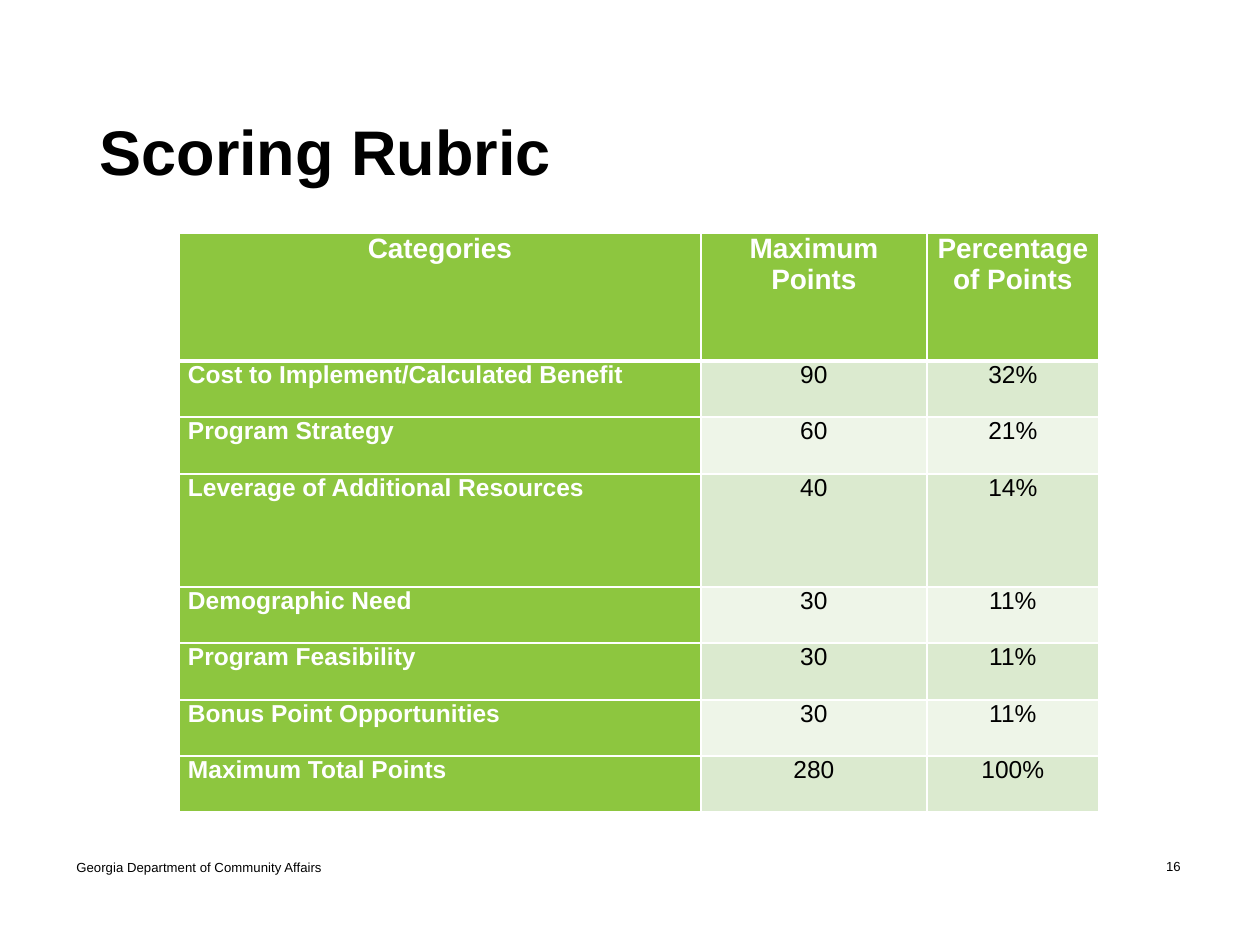
from dataclasses import dataclass

from lxml import etree
from pptx import Presentation
from pptx.dml.color import RGBColor
from pptx.enum import text
from pptx.oxml import ns
from pptx.slide import Slide
from pptx.table import _Cell
from pptx.text.text import TextFrame
from pptx.util import Emu, Pt

PX_PER_INCH = 126
BLACK = RGBColor(0x00, 0x00, 0x00)
WHITE = RGBColor(0xFF, 0xFF, 0xFF)
GREEN = RGBColor(0x8D, 0xC6, 0x3F)
BAND_DARK = RGBColor(0xDB, 0xEA, 0xCF)
BAND_LIGHT = RGBColor(0xEE, 0xF5, 0xE8)
FONT = "Arial"
LEFT, CENTER = text.PP_ALIGN.LEFT, text.PP_ALIGN.CENTER


@dataclass(frozen=True)
class Row:
    height: int
    category: str
    points: str
    share: str


@dataclass(frozen=True)
class Label:
    left: int
    top: int
    width: int
    height: int
    content: str
    align: text.PP_ALIGN


COLUMN_WIDTHS = (522, 226, 172)
ROWS = (
    Row(128, "Categories", "Maximum Points", "Percentage of Points"),
    Row(56, "Cost to Implement/Calculated Benefit", "90", "32%"),
    Row(57, "Program Strategy", "60", "21%"),
    Row(113, "Leverage of Additional Resources", "40", "14%"),
    Row(56, "Demographic Need", "30", "11%"),
    Row(57, "Program Feasibility", "30", "11%"),
    Row(56, "Bonus Point Opportunities", "30", "11%"),
    Row(56, "Maximum Total Points", "280", "100%"),
)
LABELS = (
    Label(64, 842, 426, 50, "Georgia Department of Community Affairs", LEFT),
    Label(1142, 820, 63, 93, "16", CENTER),
)


def px(value: int) -> Emu:
    return Emu(round(value * 914400 / PX_PER_INCH))


def write(tf: TextFrame, content: str, size: float, color: RGBColor,
          bold: bool = False, align: text.PP_ALIGN = LEFT) -> None:
    tf.text = content
    p = tf.paragraphs[0]
    p.alignment = align
    p.font.name, p.font.size, p.font.bold = FONT, Pt(size), bold
    p.font.color.rgb = color


def add_borders(cell: _Cell, **widths: int) -> None:
    tc_pr = cell._tc.get_or_add_tcPr()
    for side, width in widths.items():
        ln = etree.SubElement(tc_pr, ns.qn(f"a:ln{side}"), w=str(Pt(width)))
        fill = etree.SubElement(ln, ns.qn("a:solidFill"))
        etree.SubElement(fill, ns.qn("a:srgbClr"), val=str(WHITE))


def format_cell(cell: _Cell, content: str, row: int, column: int) -> None:
    header, label = row == 0, row == 0 or column == 0
    cell.margin_left = cell.margin_right = px(9)
    cell.margin_top = cell.margin_bottom = 0
    add_borders(cell, L=1, R=1, T=3 if row == 1 else 1, B=3 if header else 1)
    cell.fill.solid()
    band = BAND_DARK if row % 2 else BAND_LIGHT
    cell.fill.fore_color.rgb = GREEN if label else band
    write(cell.text_frame, content, 16 if header else 14,
          WHITE if label else BLACK, label,
          CENTER if header or column else LEFT)


def add_rubric(slide: Slide) -> None:
    table = slide.shapes.add_table(
        len(ROWS), len(COLUMN_WIDTHS), px(179), px(233),
        px(sum(COLUMN_WIDTHS)), px(sum(row.height for row in ROWS))).table
    for column, width in zip(table.columns, COLUMN_WIDTHS):
        column.width = px(width)
    for r, row in enumerate(ROWS):
        table.rows[r].height = px(row.height)
        for c, content in enumerate((row.category, row.points, row.share)):
            format_cell(table.cell(r, c), content, r, c)


def add_label(slide: Slide, label: Label) -> None:
    sp = slide.shapes.add_textbox(px(label.left), px(label.top),
                                  px(label.width), px(label.height))
    tf = sp.text_frame
    tf.word_wrap = True
    tf.vertical_anchor = text.MSO_ANCHOR.MIDDLE
    write(tf, label.content, 7.5, BLACK, align=label.align)


def add_title(slide: Slide, content: str) -> None:
    title = slide.shapes.title
    title.left, title.top = px(87), px(76)
    title.width, title.height = px(1085), px(158)
    tf = title.text_frame
    tf.vertical_anchor = text.MSO_ANCHOR.MIDDLE
    write(tf, content, 36, BLACK, bold=True)
    tf.paragraphs[0].line_spacing = 0.9


def main() -> None:
    prs = Presentation()
    prs.slide_width, prs.slide_height = px(1260), px(945)
    slide = prs.slides.add_slide(prs.slide_layouts[5])
    for label in LABELS:
        add_label(slide, label)
    add_rubric(slide)
    add_title(slide, "Scoring Rubric")
    prs.save("out.pptx")


if __name__ == "__main__":
    main()
